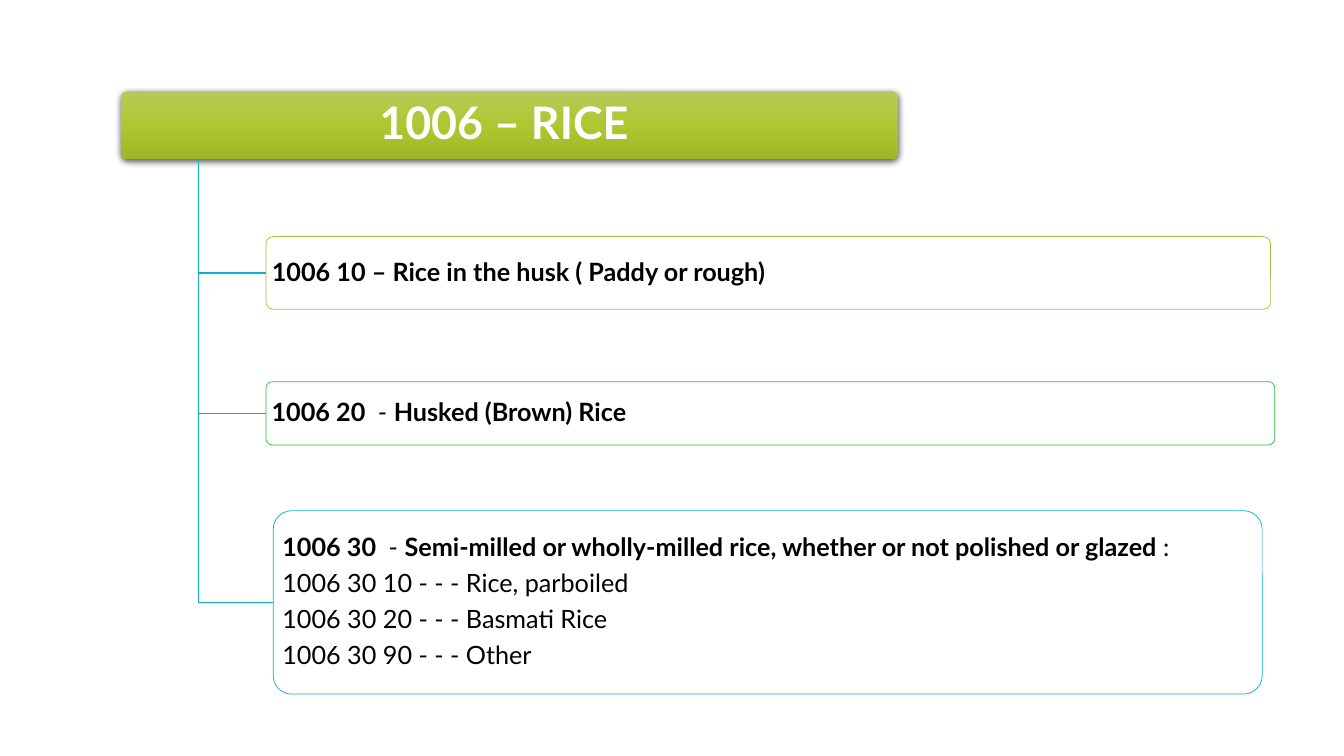
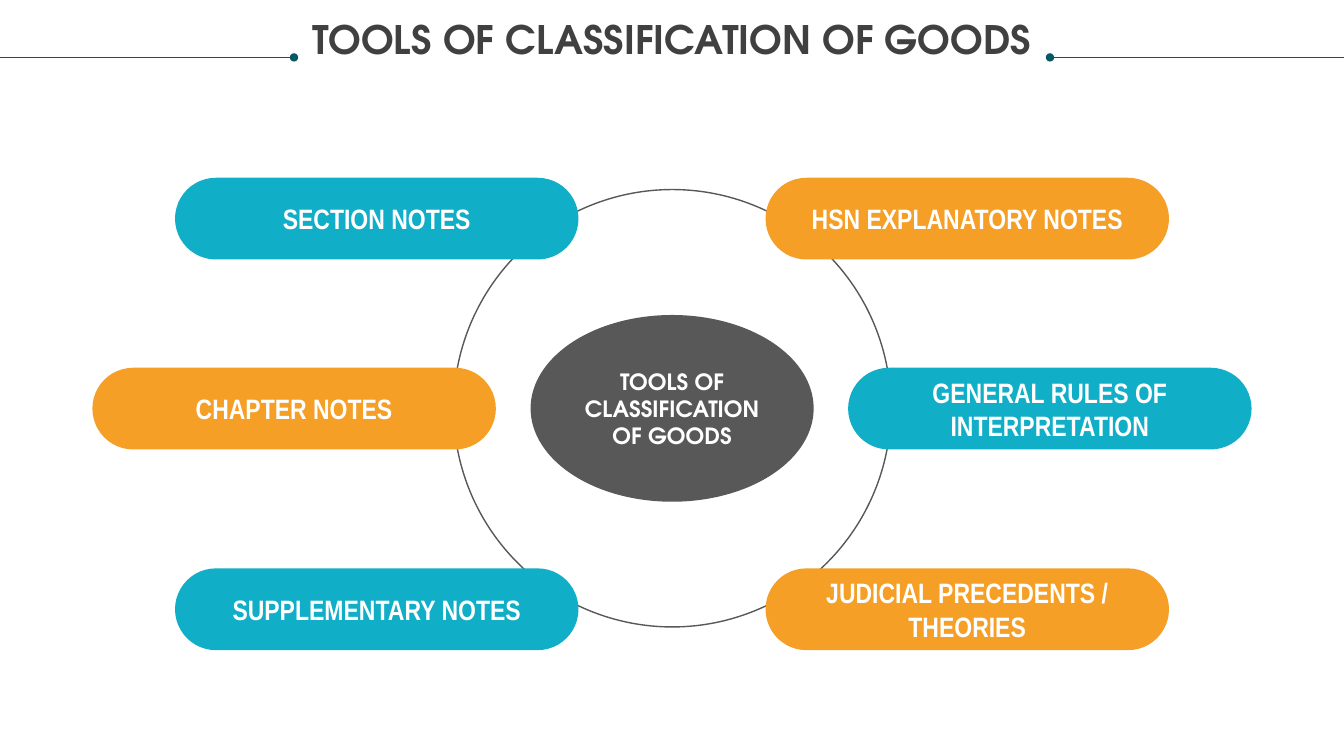
from copy import deepcopy
from lxml.etree import SubElement
from pptx import Presentation
from pptx.dml.color import RGBColor
from pptx.enum.shapes import MSO_CONNECTOR, MSO_SHAPE
from pptx.enum.text import MSO_ANCHOR, PP_ALIGN
from pptx.oxml.ns import qn
from pptx.util import Pt

TEAL, ORANGE, GREY, WHITE = "11AEC7", "F59F26", "585858", "FFFFFF"
SANS, HEAD, SLIM = "Lato", "TeX Gyre Adventor", "Arial Narrow"
ROUND, OVAL = MSO_SHAPE.ROUNDED_RECTANGLE, MSO_SHAPE.OVAL
hue = RGBColor.from_string


def paint(shape, fill=None, line=None, width=1, bend=None):
    shape.shadow.inherit = False
    if bend is not None:
        shape.adjustments[0] = bend
    if fill:
        shape.fill.solid()
        shape.fill.fore_color.rgb = hue(fill)
    else:
        shape.fill.background()
    if line:
        shape.line.color.rgb = hue(line)
        shape.line.width = Pt(width)
    else:
        shape.line.fill.background()
    return shape


def write(shape, rows, size, font, color, align=PP_ALIGN.CENTER,
          inset=None, space=None, after=0, anchor=MSO_ANCHOR.MIDDLE):
    """Each row is a list of (text, bold) runs."""
    frame = shape.text_frame
    frame.word_wrap = True
    frame.vertical_anchor = anchor
    if inset is not None:
        frame.margin_left = frame.margin_right = Pt(inset)
        frame.margin_top = frame.margin_bottom = Pt(inset)
    for i, row in enumerate(rows):
        para = frame.add_paragraph() if i else frame.paragraphs[0]
        para.alignment = align
        para.space_after = Pt(after)
        if space:
            para.line_spacing = space
        for text, bold in row:
            run = para.add_run()
            run.text = text
            run.font.size = Pt(size)
            run.font.name = font
            run.font.bold = bold
            run.font.color.rgb = hue(color)


deck = Presentation()
deck.slide_width, deck.slide_height = Pt(960), Pt(540)
tree, wheel = [deck.slides.add_slide(deck.slide_layouts[6]).shapes for _ in range(2)]

# Slide 1: heading bar with gradient and shadow
bar = paint(tree.add_shape(ROUND, Pt(86.4), Pt(65.2), Pt(555), Pt(48.4)), bend=0.1)
bar.fill.gradient()
bar.fill.gradient_angle = 270
stops = next(bar.element.iter(qn("a:gsLst")))
stops.insert(1, deepcopy(stops[0]))
shades = [(0, "B4CA58"), (0.5, "AEC731"), (1, "9EB726")]
for stop, (place, shade) in zip(bar.fill.gradient_stops, shades):
    stop.position = place
    stop.color.rgb = hue(shade)
glow = SubElement(bar.element.spPr.find(qn("a:effectLst")), qn("a:outerShdw"),
                  blurRad=str(Pt(4.5)), dist=str(Pt(1.5)), dir="5400000",
                  algn="ctr", rotWithShape="0")
black = SubElement(glow, qn("a:srgbClr"), val="000000")
SubElement(black, qn("a:alpha"), val="63000")
write(bar, [[("1006 – RICE ", True)]], 32, SANS, WHITE,
      inset=4, space=0.9, after=11.2)

# Slide 1: boxes, each hung from the bar by an elbow
TRUNK = Pt(142)
foot = bar.top + bar.height
boxes = [
    ((190, 169, 717.6, 52), "A9C038",
     [[("1006 10 – Rice in the husk ( Paddy or rough)", True)]]),
    ((190, 272.6, 720.6, 45.2), "23C53C",
     [[("1006 20 ", True), (" - ", False), ("Husked (Brown) Rice", True)]]),
    ((195.2, 364.8, 706.4, 131), TEAL,
     [[("1006 30 ", True), (" - ", False),
       ("Semi-milled or wholly-milled rice, whether or not polished or glazed ", True),
       (":", False)],
      [("1006 30 10 - - - Rice, parboiled", False)],
      [("1006 30 20 - - - Basmati Rice", False)],
      [("1006 30 90 - - - Other", False)]]),
]
for at, edge, rows in boxes:
    left, top, wide, high = map(Pt, at)
    mid = top + high // 2
    elbow = tree.build_freeform(TRUNK, foot)
    elbow.add_line_segments([(TRUNK, mid), (left, mid)], close=False)
    paint(elbow.convert_to_shape(), line=TEAL)
    box = paint(tree.add_shape(ROUND, left, top, wide, high), WHITE, edge, 0.5, 0.1)
    write(box, rows, 18, SANS, "000000", PP_ALIGN.LEFT, 2.7, 0.9, 6.3)

# Slide 2: title between two dotted rules
title = wheel.add_textbox(Pt(18), Pt(15), Pt(924), Pt(61))
write(title, [[("TOOLS OF CLASSIFICATION OF GOODS", True)]], 28, HEAD, "404040",
      inset=0, space=0.9, anchor=MSO_ANCHOR.TOP)
for start, end in [(0, 210), (960, 750)]:
    rule = wheel.add_connector(
        MSO_CONNECTOR.STRAIGHT, Pt(start), Pt(41), Pt(end), Pt(41))
    rule.line.color.rgb = hue("085764")
    rule.line.width = Pt(0.5)
    SubElement(rule.element.spPr.find(qn("a:ln")), qn("a:tailEnd"), type="oval")
    SubElement(rule.element.spPr, qn("a:effectLst"))

# Slide 2: ring and hub
paint(wheel.add_shape(OVAL, Pt(324), Pt(135.4), Pt(312.4), Pt(312.4)), line=GREY)
hub = paint(wheel.add_shape(OVAL, Pt(379), Pt(225), Pt(202.2), Pt(133.4)), GREY)
write(hub, [[("TOOLS OF CLASSIFICATION OF GOODS", True)]], 16, HEAD, WHITE)

# Slide 2: pills, mirrored about the middle, in alternating colours
WIDE, HIGH = 288.2, 58.4
pills = [
    (125, 127, "SECTION NOTES", "HSN EXPLANATORY NOTES"),
    (66, 262.7, "CHAPTER NOTES", "GENERAL RULES OF INTERPRETATION"),
    (125, 406, "SUPPLEMENTARY NOTES", "JUDICIAL PRECEDENTS / THEORIES"),
]
for i, (left, top, *names) in enumerate(pills):
    for j, name in enumerate(names):
        x = 960 - WIDE - left if j else left
        pill = wheel.add_shape(ROUND, Pt(x), Pt(top), Pt(WIDE), Pt(HIGH))
        paint(pill, (TEAL, ORANGE)[(i + j) % 2], bend=0.5)
        write(pill, [[(name, True)]], 20, SLIM, WHITE)

deck.save("out.pptx")
